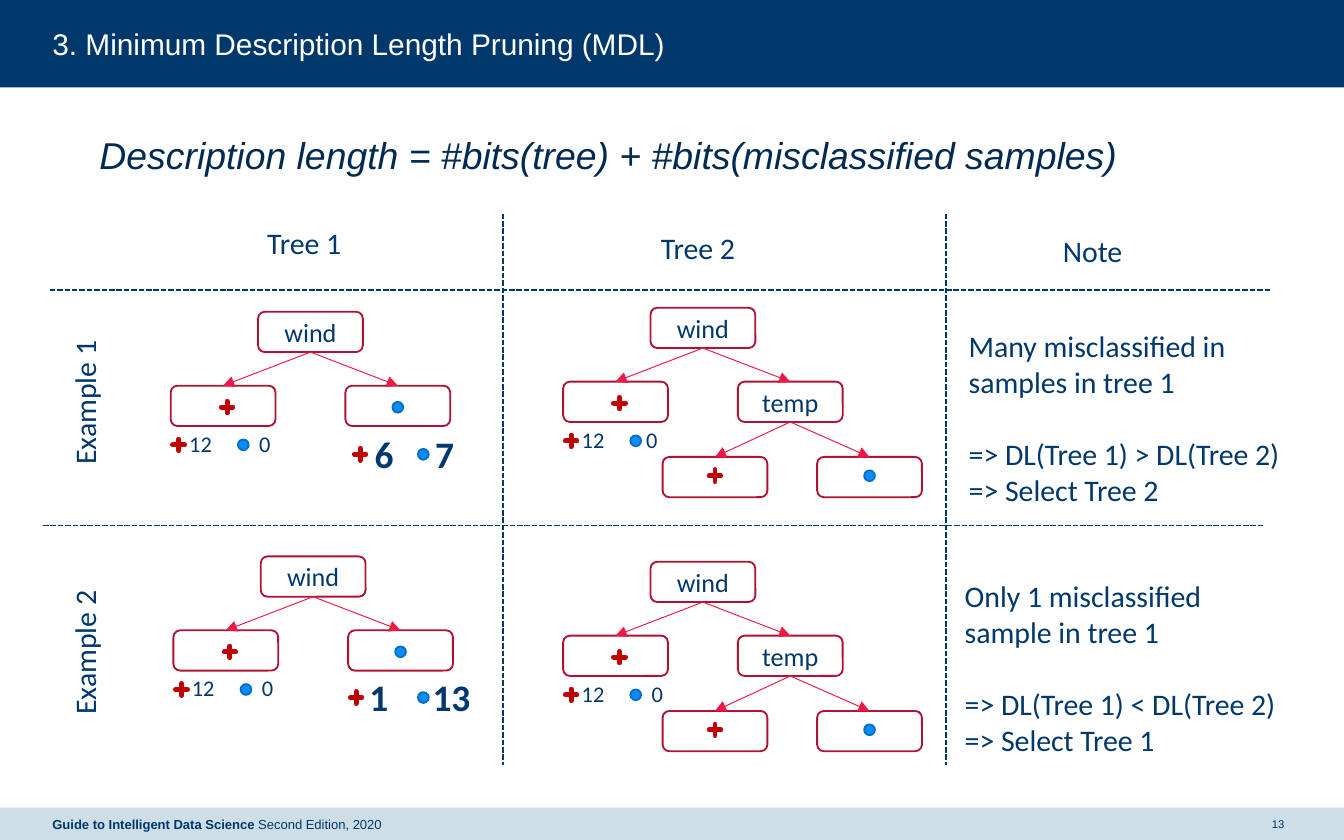
"""Build the slide on minimum description length pruning of decision trees."""
from lxml import etree
from pptx import Presentation
from pptx.dml.color import RGBColor
from pptx.enum.dml import MSO_LINE_DASH_STYLE as DASH
from pptx.enum.shapes import MSO_CONNECTOR, MSO_SHAPE as SHAPE
from pptx.enum.text import MSO_ANCHOR as ANCHOR, MSO_AUTO_SIZE as AUTO_SIZE, PP_ALIGN as ALIGN
from pptx.oxml.ns import qn
from pptx.util import Inches, Pt

WHITE = RGBColor(0xFF, 0xFF, 0xFF)
NAVY = RGBColor(0x00, 0x38, 0x6C)
DARK_NAVY = RGBColor(0x00, 0x2A, 0x51)
PALE_BLUE = RGBColor(0xCD, 0xDE, 0xE7)
CRIMSON = RGBColor(0xAF, 0x12, 0x34)
ARROW_RED = RGBColor(0xED, 0x18, 0x46)
PLUS_RED = RGBColor(0xC0, 0x00, 0x00)
DOT_BLUE = RGBColor(0x0E, 0x8B, 0xFF)
DOT_EDGE = RGBColor(0x00, 0x70, 0xC0)

NODE_WIDTH, NODE_HEIGHT = 0.78, 0.3
PLUS_SIZE, DOT_SIZE = 0.12, 0.08


def write(shape, text, size=16, font="Calibri", color=NAVY, bold=False, italic=False,
          align=ALIGN.LEFT, anchor=ANCHOR.TOP, wrap=False, inset=None, before=0):
    frame = shape.text_frame
    frame.word_wrap = wrap
    frame.auto_size = AUTO_SIZE.NONE
    frame.vertical_anchor = anchor
    if inset is not None:
        frame.margin_left = frame.margin_right = Inches(inset)
        frame.margin_top = frame.margin_bottom = Inches(inset)
    paragraph = frame.paragraphs[0]
    if paragraph.runs:
        paragraph = frame.add_paragraph()
    paragraph.alignment = align
    paragraph.space_before = Pt(before)
    run = paragraph.add_run()
    run.text = text
    run.font.size = Pt(size)
    run.font.name = font
    run.font.color.rgb = color
    run.font.bold = bold
    run.font.italic = italic
    return paragraph


def draw(shapes, kind, left, top, width, height, fill=None, line=None, line_width=1):
    shape = shapes.add_shape(kind, Inches(left), Inches(top), Inches(width), Inches(height))
    shape.shadow.inherit = False
    if fill is None:
        shape.fill.background()
    else:
        shape.fill.solid()
        shape.fill.fore_color.rgb = fill
    if line is None:
        shape.line.fill.background()
    else:
        shape.line.color.rgb = line
        shape.line.width = Pt(line_width)
    return shape


presentation = Presentation()
presentation.slide_width = Inches(10)
presentation.slide_height = Inches(6.25)
slide = presentation.slides.add_slide(presentation.slide_layouts[1])
title, body = slide.placeholders

header = draw(slide.shapes, SHAPE.RECTANGLE, 0, 0, 10, 0.65, fill=NAVY)
title.element.addprevious(header.element)
draw(slide.shapes, SHAPE.RECTANGLE, 0, 6.01, 10, 0.24, fill=PALE_BLUE)

title.left, title.top, title.width, title.height = map(Inches, (0.39, 0.19, 9.22, 0.27))
write(title, "3. Minimum Description Length Pruning (MDL)", font="Arial", color=WHITE,
      anchor=ANCHOR.MIDDLE, wrap=True, inset=0)
body.left, body.top, body.width, body.height = map(Inches, (0.32, 0.98, 9.44, 0.5))
formula = write(body, "Description length = #bits(tree) + #bits(misclassified samples)",
                size=20, font="Arial", color=DARK_NAVY, italic=True, wrap=True, inset=0, before=3.8)
properties = formula._p.get_or_add_pPr()
properties.set("marL", str(Inches(0.42)))
properties.set("indent", "0")
etree.SubElement(properties, qn("a:buNone"))

trees = [
    (1.92, 2.32, 1.83, (3.16, 2.62, 2.69, "6", 3.14, "7")),
    (1.94, 4.14, 1.85, (4.97, 2.59, 2.65, "1", 3.12, "13")),
    (4.84, 2.29, 4.71, None),
    (4.84, 4.18, 4.75, None),
]
lines = []
for left, top, zero_left, mixed_leaf in trees:
    shapes = slide.shapes.add_group_shape().shapes
    nodes = [(0, 0, "wind"), (-0.65, 0.55, ""), (0.65, 0.55, "" if mixed_leaf else "temp")]
    arrows = [(0.39, 0.3, -0.26, 0.55), (0.39, 0.3, 1.04, 0.55)]
    pluses = [(left - 0.29, top + 0.65), (left - 0.65, top + 0.93)]
    dots = [(left - 0.15, top + 0.95)]
    counts = [(left - 0.61, top + 0.83, 0.37, "12", 12), (zero_left, top + 0.83, 0.29, "0", 12)]
    if mixed_leaf:
        count_top, plus_left, plus_text, plus_count, dot_text, dot_count = mixed_leaf
        pluses.append((plus_left, count_top + 0.16))
        dots += [(left + 1, top + 0.67), (3.11, count_top + 0.18)]
        counts.append((plus_text, count_top, 0.34, plus_count, 20))
        counts.append((dot_text, count_top, 0.19 + 0.15 * len(dot_count), dot_count, 20))
    else:
        nodes += [(0.09, 1.11, ""), (1.24, 1.11, "")]
        arrows += [(1.04, 0.85, 0.48, 1.11), (1.04, 0.85, 1.63, 1.11)]
        pluses.append((left + 0.42, top + 1.19))
        dots.append((left + 1.59, top + 1.21))

    for x, y, name in nodes:
        node = draw(shapes, SHAPE.ROUNDED_RECTANGLE, left + x, top + y,
                    NODE_WIDTH, NODE_HEIGHT, line=CRIMSON)
        if name:
            write(node, name, size=14, align=ALIGN.CENTER, anchor=ANCHOR.MIDDLE, wrap=True)
    for x, y in pluses:
        plus = draw(shapes, SHAPE.MATH_PLUS, x, y, PLUS_SIZE, PLUS_SIZE,
                    line=PLUS_RED, line_width=2.5)
        plus.adjustments[0] = 0.015
    for x, y in dots:
        draw(shapes, SHAPE.OVAL, x, y, DOT_SIZE, DOT_SIZE, fill=DOT_BLUE, line=DOT_EDGE)
    for x, y, width, text, size in counts:
        count = shapes.add_textbox(Inches(x), Inches(y), Inches(width), Inches(size * 0.022 + 0.02))
        write(count, text, size=size, bold=size == 20)
    for x1, y1, x2, y2 in arrows:
        lines.append((shapes, left + x1, top + y1, left + x2, top + y2, True))

for x1, y1, x2, y2 in [(0.32, 3.91, 9.41, 3.91), (0.37, 2.16, 9.46, 2.16),
                       (3.74, 1.59, 3.74, 5.69), (7.04, 1.59, 7.04, 5.69)]:
    lines.append((slide.shapes, x1, y1, x2, y2, False))
for shapes, x1, y1, x2, y2, is_arrow in lines:
    connector = shapes.add_connector(MSO_CONNECTOR.STRAIGHT, Inches(x1), Inches(y1),
                                     Inches(x2), Inches(y2))
    connector.line.color.rgb = ARROW_RED if is_arrow else NAVY
    connector.line.width = Pt(0.5 if is_arrow else 1)
    if is_arrow:
        etree.SubElement(connector.line._get_or_add_ln(), qn("a:tailEnd"), type="triangle")
    else:
        connector.line.dash_style = DASH.SQUARE_DOT
    etree.SubElement(connector.element.spPr, qn("a:effectLst"))

for left, top, width, text, rotation in [
    (0.06, 2.8, 1.14, "Example 1", 270),
    (0.06, 4.66, 1.14, "Example 2", 270),
    (1.89, 1.62, 0.76, "Tree 1", 0),
    (4.82, 1.66, 0.76, "Tree 2", 0),
    (7.81, 1.68, 0.65, "Note", 0),
]:
    heading = slide.shapes.add_textbox(Inches(left), Inches(top), Inches(width), Inches(0.37))
    heading.rotation = rotation
    write(heading, text)

for left, top, finding, sign, choice in [
    (7.11, 2.39, "Many misclassified in samples in tree 1", ">", 2),
    (7.08, 4.25, "Only 1 misclassified sample in tree 1", "<", 1),
]:
    note = slide.shapes.add_textbox(Inches(left), Inches(top), Inches(2.6), Inches(1.45))
    write(note, finding, wrap=True)
    write(note, f"=> DL(Tree 1) {sign} DL(Tree 2)", wrap=True, before=19.5)
    write(note, f"=> Select Tree {choice}", wrap=True)

footer = slide.shapes.add_textbox(Inches(0.39), Inches(6.01), Inches(4.39), Inches(0.24))
credit = write(footer, "Guide to Intelligent Data Science ", size=7, font="Arial", bold=True,
               anchor=ANCHOR.MIDDLE, wrap=True, inset=0)
edition = credit.add_run()
edition.text = "Second Edition, 2020"
edition.font.size = Pt(7)
edition.font.name = "Arial"
edition.font.color.rgb = NAVY
page_number = slide.shapes.add_textbox(Inches(9.41), Inches(6.01), Inches(0.2), Inches(0.24))
write(page_number, "13", size=6, font="Arial", align=ALIGN.CENTER, anchor=ANCHOR.MIDDLE,
      wrap=True, inset=0)

presentation.save("out.pptx")
